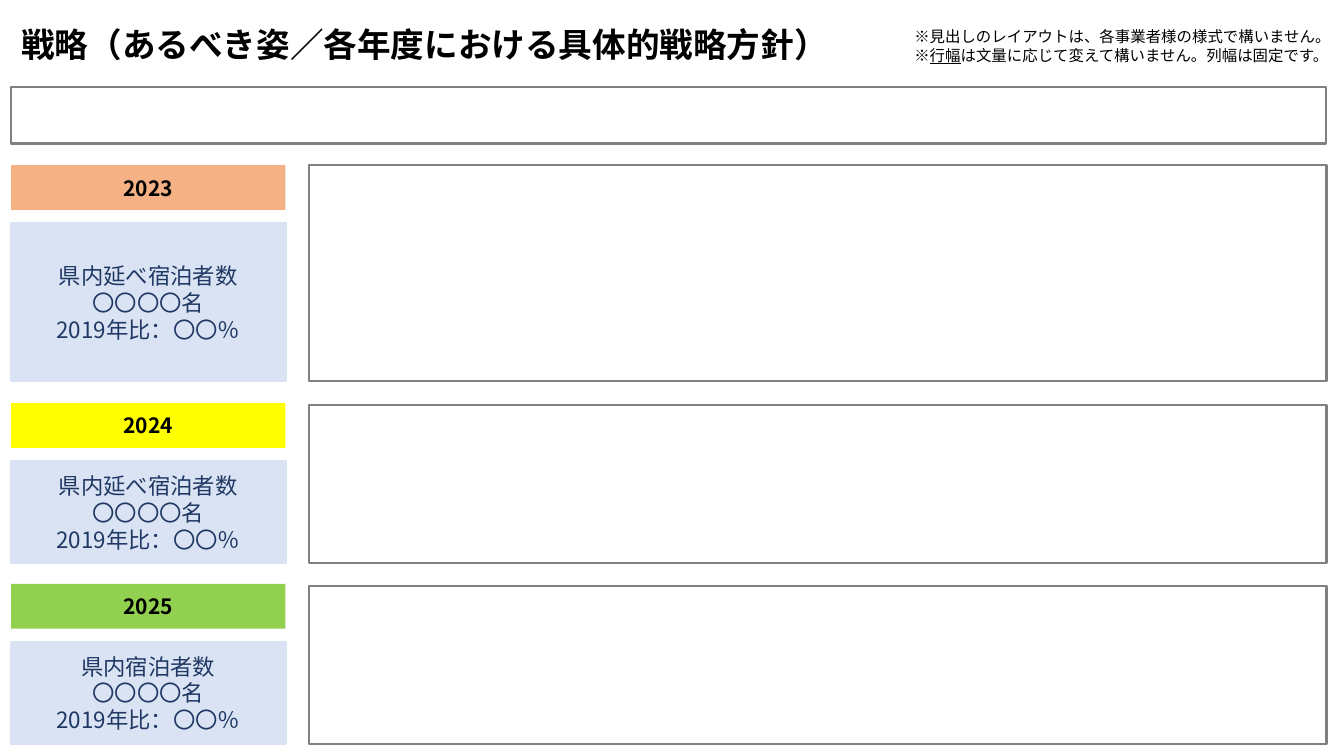
from lxml import etree
from pptx import Presentation
from pptx.dml.color import RGBColor
from pptx.enum.shapes import MSO_SHAPE
from pptx.enum.text import MSO_ANCHOR, MSO_AUTO_SIZE, PP_ALIGN
from pptx.oxml.ns import qn
from pptx.util import Pt

RECTANGLE = MSO_SHAPE.RECTANGLE
MIDDLE = MSO_ANCHOR.MIDDLE
NO_AUTOFIT = MSO_AUTO_SIZE.NONE
LEFT, CENTER = PP_ALIGN.LEFT, PP_ALIGN.CENTER


class Theme:
    font = "Noto Sans CJK JP"
    black, white, frame = "000000", "FFFFFF", "808080"
    metric_fill, metric_text = "DAE3F3", "203864"
    orange, yellow, green = "F4B183", "FFFF00", "92D050"
    title_size, metric_size, year_size, note_size = 24, 16, 15, 11
    line_width = 1.5


def style_text(frame, size, color, align=LEFT, bold=False):
    for paragraph in frame.paragraphs:
        paragraph.alignment = align
        font = paragraph.font
        font.size, font.bold, font.name = Pt(size), bold, Theme.font
        font.color.rgb = RGBColor.from_string(color)
        latin = paragraph.font._element.find(qn("a:latin"))
        east_asian = etree.Element(qn("a:ea"), typeface=Theme.font)
        latin.addnext(east_asian)


def add_box(left, top, width, height, fill, line=None):
    box = slide.shapes.add_shape(RECTANGLE, Pt(left), Pt(top), Pt(width), Pt(height))
    box.shadow.inherit = False
    box.fill.solid()
    box.fill.fore_color.rgb = RGBColor.from_string(fill)
    if line:
        box.line.color.rgb = RGBColor.from_string(line)
        box.line.width = Pt(Theme.line_width)
    else:
        box.line.fill.background()
    box.text_frame.vertical_anchor = MIDDLE
    return box


prs = Presentation()
prs.slide_width, prs.slide_height = Pt(960), Pt(540)
slide = prs.slides.add_slide(prs.slide_layouts[5])

# Title
title = slide.shapes.title
title.left, title.top, title.width, title.height = Pt(8), Pt(13.5), Pt(597), Pt(36)
title.text_frame.text = "戦略（あるべき姿／各年度における具体的戦略方針）"
title.text_frame.auto_size = NO_AUTOFIT
title.text_frame.vertical_anchor = MIDDLE
style_text(title.text_frame, Theme.title_size, Theme.black, bold=True)

# Layout notes at top right
notes = slide.shapes.add_textbox(Pt(646), Pt(16), Pt(314), Pt(34)).text_frame
notes.word_wrap = True
notes.text = "※見出しのレイアウトは、各事業者様の様式で構いません。"
width_note = notes.add_paragraph()
for part, underlined in [
    ("※", False),
    ("行幅", True),
    ("は文量に応じて変えて構いません。列幅は固定です。", False),
]:
    run = width_note.add_run()
    run.text = part
    run.font.underline = underlined
style_text(notes, Theme.note_size, Theme.black)

# Overall vision frame
margin, right_edge = 8, 947.5
add_box(margin, 62, right_edge - margin, 40.5, Theme.white, Theme.frame)

# One band per year: heading, target figures and strategy frame
label_width, panel_left = 196, 220.5
year_height, metric_offset = 32, 41.5
bands = [
    ("2023", Theme.orange, "県内延べ宿泊者数", 118, 118, 272.5),
    ("2024", Theme.yellow, "県内延べ宿泊者数", 288, 289.5, 402.5),
    ("2025", Theme.green, "県内宿泊者数", 417, 418.5, 531.5),
]
for year, year_fill, metric_name, year_top, panel_top, bottom in bands:
    add_box(panel_left, panel_top, right_edge - panel_left, bottom - panel_top,
            Theme.white, Theme.frame)

    heading = add_box(margin, year_top, label_width, year_height, year_fill)
    heading.text_frame.text = year
    style_text(heading.text_frame, Theme.year_size, Theme.black, CENTER, bold=True)

    metric_top = year_top + metric_offset
    metric = add_box(margin, metric_top, label_width, bottom - metric_top,
                     Theme.metric_fill, Theme.metric_fill)
    metric.text_frame.text = f"{metric_name}\n〇〇〇〇名\n2019年比：〇〇％"
    style_text(metric.text_frame, Theme.metric_size, Theme.metric_text, CENTER)

prs.save("out.pptx")
